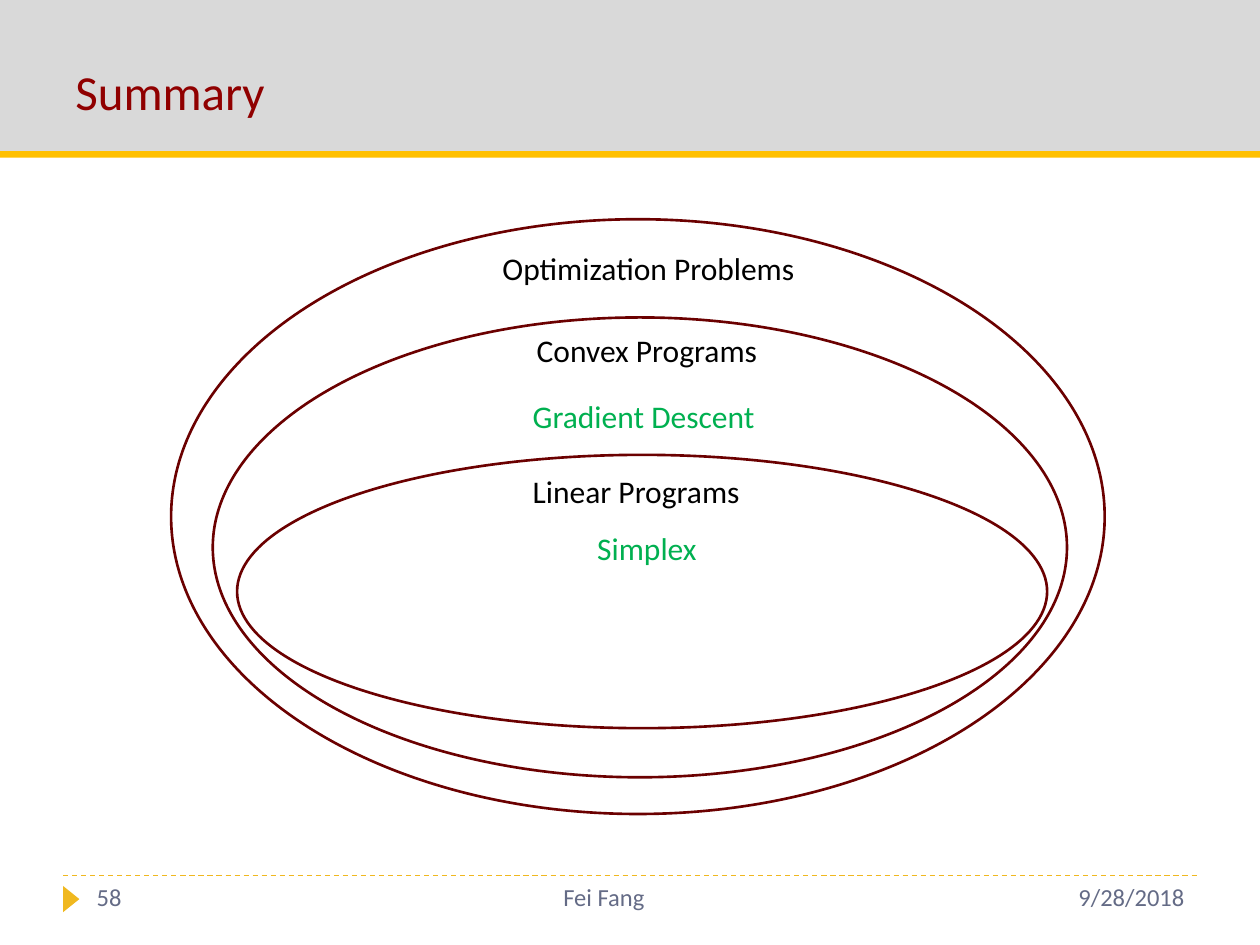
"""Build the summary slide of nested problem classes."""
from lxml import etree
from pptx import Presentation
from pptx import util as u
from pptx.dml.color import RGBColor
from pptx.enum import dml, shapes, text
from pptx.oxml.ns import qn

GREY = RGBColor(0xD9, 0xD9, 0xD9)
GOLD = RGBColor(0xFF, 0xC0, 0x00)
AMBER = RGBColor(0xF0, 0xB8, 0x1F)
RED = RGBColor(0x90, 0x00, 0x00)
MAROON = RGBColor(0x6B, 0x00, 0x00)
SLATE = RGBColor(0x64, 0x6B, 0x86)
BLACK = RGBColor(0x00, 0x00, 0x00)
GREEN = RGBColor(0x00, 0xB0, 0x50)

deck = Presentation()
deck.slide_width, deck.slide_height = u.Cm(25.4), u.Cm(19.05)
page = deck.slides.add_slide(deck.slide_layouts[6])


def add_figure(kind, place, fill=None):
    figure = page.shapes.add_shape(kind, *map(u.Cm, place))
    figure.shadow.inherit = False
    if fill is None:
        figure.fill.background()
        figure.line.color.rgb = MAROON
        figure.line.width = u.Pt(1.5)
    else:
        figure.fill.solid()
        figure.fill.fore_color.rgb = fill
        figure.line.fill.background()
    return figure


def add_words(words, place, size, color, align=text.PP_ALIGN.LEFT, wrap=True):
    box = page.shapes.add_textbox(*map(u.Cm, place))
    box.text_frame.word_wrap = wrap
    para = box.text_frame.paragraphs[0]
    para.text = words
    para.alignment = align
    para.font.name = "Calibri"
    para.font.size = u.Pt(size)
    para.font.color.rgb = color
    return box


add_figure(shapes.MSO_SHAPE.RECTANGLE, (0, 0, 25.4, 3.05), GREY)
add_figure(shapes.MSO_SHAPE.RECTANGLE, (0, 3.05, 25.4, 0.13), GOLD)
title = add_words("Summary", (1.27, 0.43, 22.86, 2.13), 28, RED)
title.text_frame.vertical_anchor = text.MSO_ANCHOR.BOTTOM

rule = page.shapes.add_connector(
    shapes.MSO_CONNECTOR.STRAIGHT, u.Cm(1.27), u.Cm(17.65), u.Cm(24.13), u.Cm(17.65))
rule.line.color.rgb = AMBER
rule.line.width = u.Pt(0.75)
rule.line.dash_style = dml.MSO_LINE.DASH
etree.SubElement(rule._element.spPr, qn("a:effectLst"))
marker = add_figure(shapes.MSO_SHAPE.ISOSCELES_TRIANGLE, (1.17, 17.96, 0.53, 0.33), AMBER)
marker.rotation = 90

for words, left, width, align in (
    ("58", 1.7, 2.26, text.PP_ALIGN.LEFT),
    ("Fei Fang", 3.96, 16.43, text.PP_ALIGN.CENTER),
    ("9/28/2018", 20.4, 3.73, text.PP_ALIGN.RIGHT),
):
    add_words(words, (left, 17.65, width, 1.02), 14, SLATE, align)

for ellipse in (
    (3.45, 4.42, 18.82, 11.99),
    (4.29, 6.4, 17.22, 9.27),
    (4.78, 9.17, 16.33, 5.51),
):
    add_figure(shapes.MSO_SHAPE.OVAL, ellipse)

for words, left, top, width, color in (
    ("Optimization Problems", 9.88, 4.9, 6.53, BLACK),
    ("Convex Programs", 10.57, 6.55, 5.16, BLACK),
    ("Gradient Descent", 10.49, 7.87, 5.16, GREEN),
    ("Linear Programs", 10.49, 9.4, 4.75, BLACK),
    ("Simplex", 11.79, 10.54, 2.54, GREEN),
):
    label = add_words(words, (left, top, width, 1.02), 18, color, wrap=False)
    label.text_frame.auto_size = text.MSO_AUTO_SIZE.SHAPE_TO_FIT_TEXT

deck.save("out.pptx")
